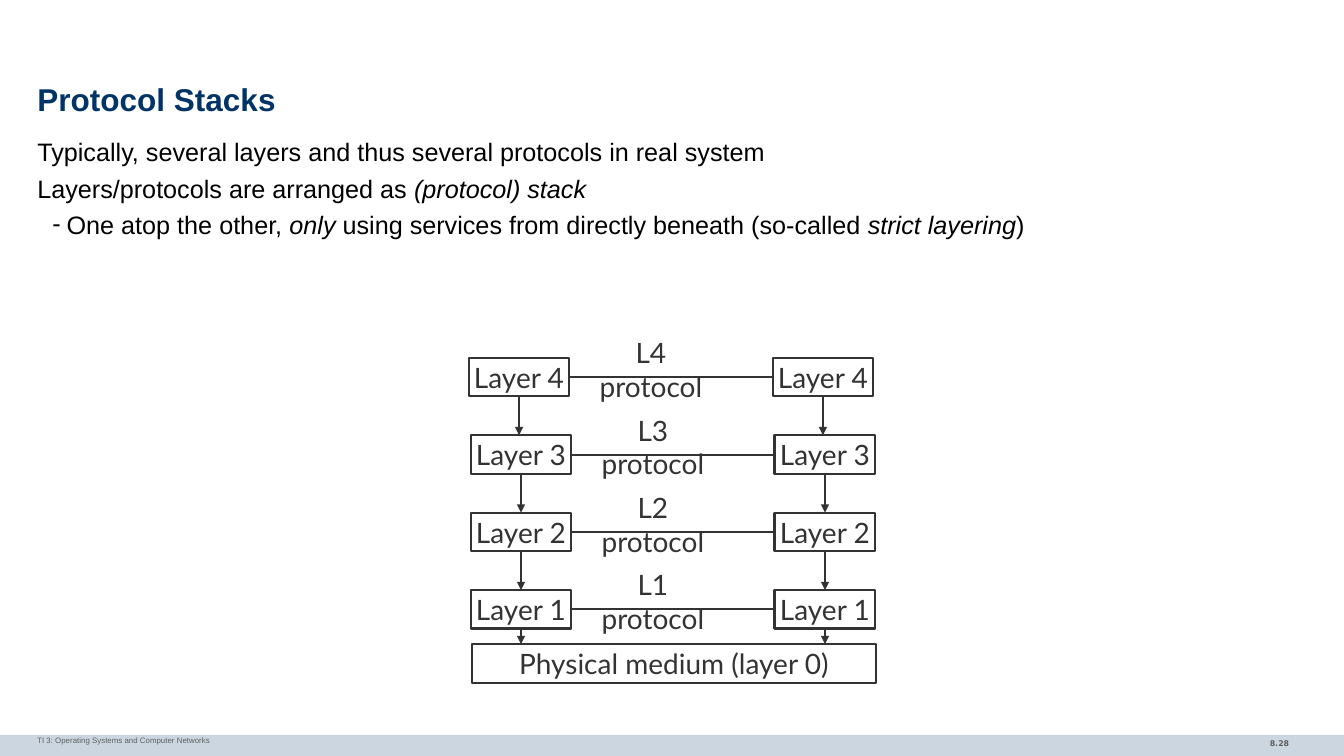
from lxml.etree import SubElement
from pptx import Presentation
from pptx.dml.color import RGBColor
from pptx.enum.shapes import MSO_CONNECTOR, MSO_SHAPE
from pptx.enum.text import MSO_ANCHOR, MSO_AUTO_SIZE, PP_ALIGN
from pptx.oxml.ns import qn
from pptx.util import Cm, Pt

TITLE = "Protocol Stacks"
BODY = [
    (0, [("Typically, several layers and thus several protocols in real system", False)]),
    (0, [("Layers/protocols are arranged as ", False), ("(protocol) stack", True)]),
    (1, [("One atop the other, ", False), ("only ", True),
         ("using services from directly beneath (so-called ", False),
         ("strict layering", True), (")", False)]),
]
FOOTER = "TI 3: Operating Systems and Computer Networks"
PAGE_NUMBER = "8.28"
LAYERS = [(4, 11.81), (3, 11.86), (2, 11.86), (1, 11.86)]
MEDIUM = "Physical medium (layer 0)"

INK = "333333"
GREY = "5F5F5F"
FIRST_TOP, PITCH = 9.02, 1.95
BOX_WIDTH, BOX_HEIGHT = 2.54, 0.97
HOST_OFFSET = 7.66
MEDIUM_TOP = 16.23


def color(value):
    return RGBColor.from_string(value)


def style(paragraph, size, name, ink, bold=False, align=PP_ALIGN.LEFT):
    paragraph.alignment = align
    font = paragraph.font
    font.size, font.name, font.bold = Pt(size), name, bold
    font.color.rgb = color(ink)


def place(shape, left, top, width, height):
    shape.left, shape.top, shape.width, shape.height = Cm(left), Cm(top), Cm(width), Cm(height)


def set_insets(frame, left, top, right, bottom):
    frame.margin_left, frame.margin_top = Cm(left), Cm(top)
    frame.margin_right, frame.margin_bottom = Cm(right), Cm(bottom)


def add_rectangle(page, left, top, width, height, fill, line=None):
    box = page.shapes.add_shape(MSO_SHAPE.RECTANGLE, Cm(left), Cm(top), Cm(width), Cm(height))
    box.shadow.inherit = False
    box.fill.solid()
    box.fill.fore_color.rgb = color(fill)
    if line:
        box.line.color.rgb = color(line)
        box.line.width = Pt(1.5)
    else:
        box.line.fill.background()
    return box


def add_stack_box(page, text, left, top, width, height):
    frame = add_rectangle(page, left, top, width, height, "FFFFFF", INK).text_frame
    frame.word_wrap = False
    frame.vertical_anchor = MSO_ANCHOR.MIDDLE
    frame.text = text
    style(frame.paragraphs[0], 20, "Lato", INK, align=PP_ALIGN.CENTER)


def add_text(page, text, left, top, width, height, insets, *look, **options):
    frame = page.shapes.add_textbox(Cm(left), Cm(top), Cm(width), Cm(height)).text_frame
    frame.word_wrap = True
    set_insets(frame, *insets)
    frame.text = text
    style(frame.paragraphs[0], *look, **options)


def add_line(page, x1, y1, x2, y2, arrow=False):
    line = page.shapes.add_connector(MSO_CONNECTOR.STRAIGHT, Cm(x1), Cm(y1), Cm(x2), Cm(y2))
    line.line.color.rgb = color(INK)
    line.line.width = Pt(1.5)
    if arrow:
        SubElement(line.line._get_or_add_ln(), qn("a:tailEnd"), type="triangle")
    SubElement(line._element.spPr, qn("a:effectLst"))


def fill_title(page):
    title = page.shapes.title
    place(title, 0.94, 1.98, 32, 1.19)
    frame = title.text_frame
    frame.auto_size = MSO_AUTO_SIZE.NONE
    frame.vertical_anchor = MSO_ANCHOR.MIDDLE
    set_insets(frame, 0, 0, 0, 0)
    frame.text = TITLE
    frame.paragraphs[0].line_spacing = 0.85
    style(frame.paragraphs[0], 22.5, "Arial", "003366", bold=True)


def fill_body(page):
    body = page.placeholders[1]
    place(body, 0.94, 3.43, 32, 14.58)
    frame = body.text_frame
    frame.auto_size = MSO_AUTO_SIZE.NONE
    set_insets(frame, 0, 0, 0, 0)
    for index, (level, spans) in enumerate(BODY):
        para = frame.add_paragraph() if index else frame.paragraphs[0]
        para.level = level
        para.line_spacing = 1.02
        para.space_before = Pt(3.8 if index else 0)
        properties = para._p.get_or_add_pPr()
        properties.set("marL", str(Cm(0.74) if level else 0))
        properties.set("indent", str(Cm(-0.36) if level else 0))
        if level:
            SubElement(properties, qn("a:buChar"), char="-")
        else:
            SubElement(properties, qn("a:buNone"))
        style(para, 18, "Arial", "000000")
        for text, italic in spans:
            span = para.add_run()
            span.text = text
            if italic:
                span.font.italic = True


def draw_stacks(page):
    add_stack_box(page, MEDIUM, 11.89, MEDIUM_TOP, 10.19, 0.99)
    for row, (number, left) in enumerate(LAYERS):
        top = FIRST_TOP + row * PITCH
        bottom = top + BOX_HEIGHT
        next_top = MEDIUM_TOP if number == 1 else top + PITCH
        for host_left in (left, left + HOST_OFFSET):
            add_stack_box(page, f"Layer {number}", host_left, top, BOX_WIDTH, BOX_HEIGHT)
            center = host_left + BOX_WIDTH / 2
            add_line(page, center, bottom, center, next_top, arrow=True)
        add_text(page, f"L{number} protocol", left + 3.1, top - 0.69, 3.99, 1.09,
                 (0, 0.13, 1, 0.13), 20, "Lato", INK, align=PP_ALIGN.CENTER)
        middle = top + BOX_HEIGHT / 2
        add_line(page, left + BOX_WIDTH, middle, left + HOST_OFFSET, middle)


def main():
    deck = Presentation()
    deck.slide_width, deck.slide_height = Cm(33.87), Cm(19.05)
    page = deck.slides.add_slide(deck.slide_layouts[1])
    add_rectangle(page, 0, 18.52, 33.87, 0.53, "CCD6E0")
    add_text(page, PAGE_NUMBER, 28.19, 18.49, 4.55, 0.58, (0.25, 0.13, 0.25, 0.13),
             5.6, "DejaVu Sans", GREY, bold=True, align=PP_ALIGN.RIGHT)
    add_text(page, FOOTER, 0.94, 18.42, 22.15, 0.63, (0, 0.13, 0, 0.13), 5.6, "Arial", GREY)
    fill_title(page)
    fill_body(page)
    draw_stacks(page)
    deck.save("out.pptx")


if __name__ == "__main__":
    main()
